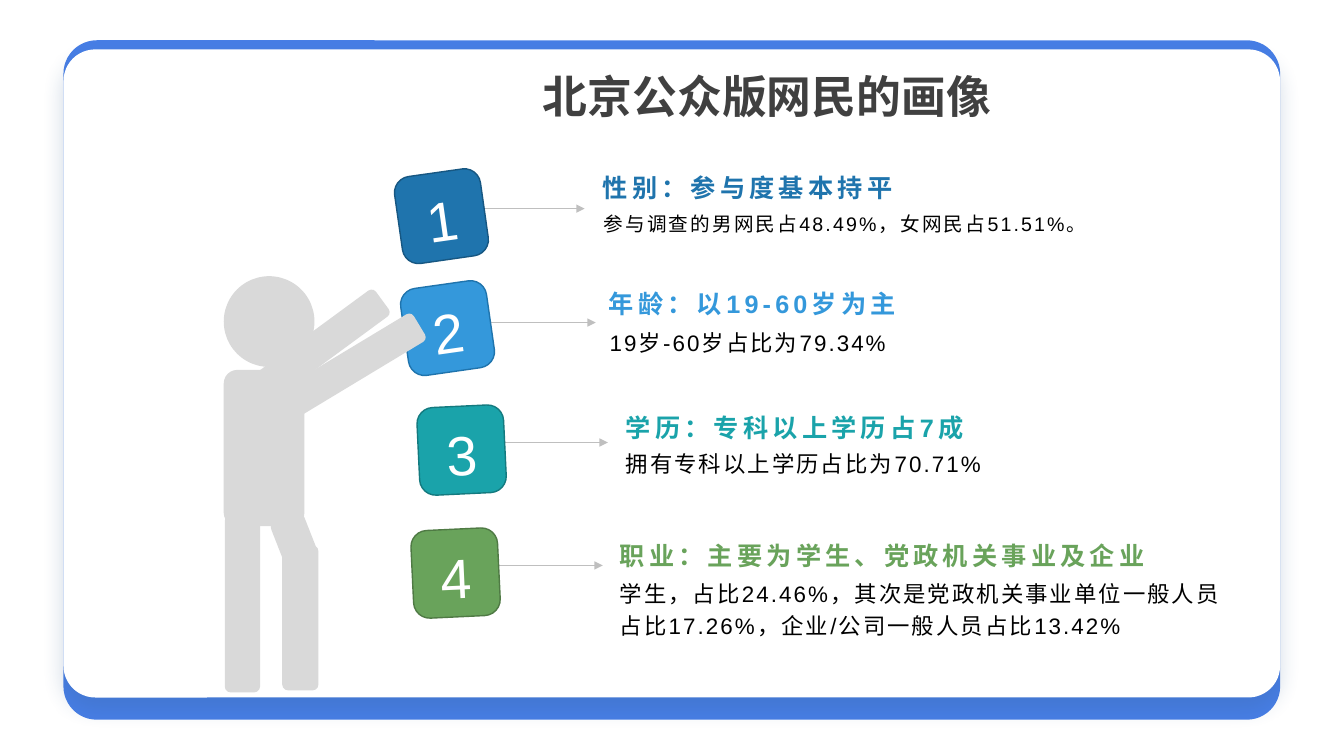
"""Builds the slide on the portrait of Beijing netizens."""
from lxml import etree
from pptx import Presentation
from pptx import util as u
from pptx.dml.color import RGBColor
from pptx.enum import shapes, text
from pptx.oxml import ns

PX = 9144
THEME = {
    "font": "Arial",
    "frame": "477EE5", "card": "FFFFFF", "shade": "376092",
    "title": "404040", "body": "000000", "digit": "FFFFFF",
    "arrow": "BFBFBF", "man": "D9D9D9",
    "title_pt": 32, "head_pt": 18, "digit_pt": 39.6,
}
KIND = shapes.MSO_SHAPE
ALIGN = text.PP_ALIGN
ANCHOR = text.MSO_ANCHOR

deck = Presentation()
deck.slide_width, deck.slide_height = u.Inches(13.333), u.Inches(7.5)
slide = deck.slides.add_slide(deck.slide_layouts[6])


def block(box, fill, kind=KIND.ROUNDED_RECTANGLE, adj=None, turn=0, edge=None):
    form = slide.shapes.add_shape(kind, *(n * PX for n in box))
    form.shadow.inherit = False
    form.fill.solid()
    form.fill.fore_color.rgb = RGBColor.from_string(fill)
    if edge:
        form.line.color.rgb = RGBColor.from_string(edge)
        form.line.width = u.Pt(1)
    else:
        form.line.fill.background()
    if adj:
        form.adjustments[0] = adj
    form.rotation = turn
    return form


def write(form, words, size, color, bold=False, align=ALIGN.LEFT,
          anchor=ANCHOR.TOP, gap=None, lead=None, pad=(5, 5)):
    frame = form.text_frame
    frame.text = words
    frame.word_wrap = True
    frame.vertical_anchor = anchor
    frame.margin_top, frame.margin_bottom = (n * PX for n in pad)
    para = frame.paragraphs[0]
    para.alignment = align
    if lead:
        para.line_spacing = lead
    run = para.runs[0]
    run.font.name = THEME["font"]
    run.font.size = u.Pt(size)
    run.font.bold = bold
    run.font.color.rgb = RGBColor.from_string(color)
    if gap:
        run.font._element.set("spc", str(gap))


block((63, 40, 1207, 674), THEME["frame"], adj=0.049)
card = block((63, 49, 1207, 643), THEME["card"], adj=0.049)
glow = etree.SubElement(
    card._element.spPr.find(ns.qn("a:effectLst")), ns.qn("a:outerShdw"),
    blurRad=str(u.Pt(16)), dist=str(u.Pt(8)), dir="5400000", algn="t", rotWithShape="0")
tint = etree.SubElement(glow, ns.qn("a:srgbClr"), val=THEME["shade"])
etree.SubElement(tint, ns.qn("a:alpha"), val="23000")

title = slide.shapes.add_textbox(*(n * PX for n in (461, 63, 600, 64)))
write(title, "北京公众版网民的画像", THEME["title_pt"], THEME["title"], True, ALIGN.CENTER)
title.text_frame.auto_size = text.MSO_AUTO_SIZE.SHAPE_TO_FIT_TEXT

ITEMS = [
    ("1F74AD", "175782", (395, 171), 351.9, (477, 580, 207),
     (588, 160, 409), "性别：参与度基本持平",
     (589, 206, 503), "参与调查的男网民占48.49%，女网民占51.51%。", 14),
    ("3498DB", "1F74AD", (401, 282), 351.9, (487, 591, 320),
     (594, 275, 401), "年龄：以19-60岁为主",
     (595, 321, 354), "19岁-60岁占比为79.34%", 16),
    ("1AA3AA", "147A7F", (415, 403), 357.3, (500, 603, 439),
     (611, 398, 401), "学历：专科以上学历占7成",
     (611, 441, 513), "拥有专科以上学历占比为70.71%", 16),
    ("69A35B", "4F7A44", (409, 525), 357.3, (494, 598, 561),
     (605, 525, 603), "职业：主要为学生、党政机关事业及企业",
     (605, 570, 617),
     "学生，占比24.46%，其次是党政机关事业单位一般人员占比17.26%，企业/公司一般人员占比13.42%", 16),
]
for num, (hue, edge, spot, turn, (x1, x2, y), top, head, low, body, size) in enumerate(ITEMS, 1):
    arrow = slide.shapes.add_connector(
        shapes.MSO_CONNECTOR.STRAIGHT, x1 * PX, y * PX, x2 * PX, y * PX)
    arrow.line.color.rgb = RGBColor.from_string(THEME["arrow"])
    arrow.line.width = u.Pt(0.5)
    etree.SubElement(arrow.line._get_or_add_ln(), ns.qn("a:tailEnd"), type="triangle")
    etree.SubElement(arrow._element.spPr, ns.qn("a:effectLst"))

    tile = block((*spot, 86, 87), hue, adj=0.186, turn=turn, edge=edge)
    write(tile, str(num), THEME["digit_pt"], THEME["digit"],
          align=ALIGN.CENTER, anchor=ANCHOR.MIDDLE, lead=1.1)

    label = slide.shapes.add_textbox(*(n * PX for n in (*top, 41)))
    write(label, head, THEME["head_pt"], hue, True,
          anchor=ANCHOR.BOTTOM, gap=300, lead=1.2, pad=(5, 0))
    note = slide.shapes.add_textbox(*(n * PX for n in (*low, 37)))
    write(note, body, size, THEME["body"], gap=150, lead=1.2, pad=(0, 5))

LIMBS = [
    ((222, 367, 80, 155), 0, None),
    ((223, 511, 35, 176), 0, None),
    ((274, 508, 35, 53), 338.6, 0.296),
    ((280, 541, 36, 144), 0, None),
    ((302, 267, 32, 152), 53.7, None),
    ((335, 286, 32, 152), 58.9, None),
]
for box, turn, adj in LIMBS:
    block(box, THEME["man"], adj=adj, turn=turn)
block((222, 274, 90, 90), THEME["man"], KIND.OVAL)

deck.save("out.pptx")
